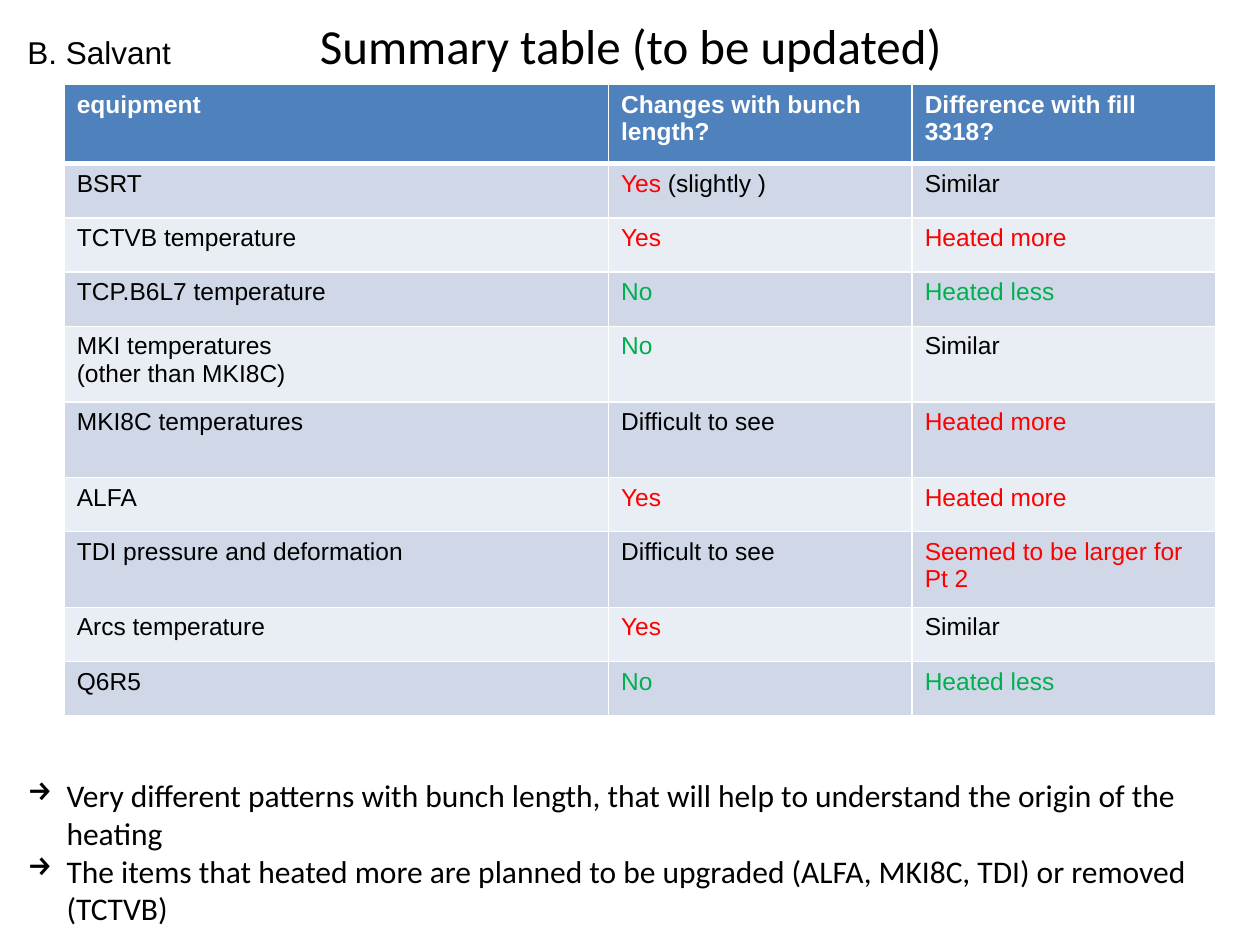
from dataclasses import dataclass

from lxml import etree
from pptx import Presentation
from pptx import util as u
from pptx.dml.color import RGBColor
from pptx.enum import text
from pptx.oxml import ns


@dataclass(frozen=True)
class Theme:
    heading: str = "Calibri"
    body: str = "Arial"
    ink: str = "000000"
    white: str = "FFFFFF"
    more: str = "FF0000"
    less: str = "00B050"
    header: str = "4F81BD"
    bands: tuple = ("D0D8E8", "E9EDF4")
    title_size: int = 28
    note_size: int = 18
    table_size: int = 14


THEME = Theme()
RED, GREEN = THEME.more, THEME.less

YES, NO = [("Yes", RED)], [("No", GREEN)]
UNCLEAR, SIMILAR = [("Difficult to see", THEME.ink)], [("Similar", THEME.ink)]
MORE, LESS = [("Heated more", RED)], [("Heated less", GREEN)]

HEADINGS = ["equipment", "Changes with bunch length?", "Difference with fill 3318?"]
FINDINGS = [
    ("BSRT", YES + [(" (slightly )", THEME.ink)], SIMILAR),
    ("TCTVB temperature", YES, MORE),
    ("TCP.B6L7 temperature", NO, LESS),
    ("MKI temperatures \n(other than MKI8C)", NO, SIMILAR),
    ("MKI8C temperatures", UNCLEAR, MORE),
    ("ALFA", YES, MORE),
    ("TDI pressure and deformation", UNCLEAR, [("Seemed to be larger for Pt 2", RED)]),
    ("Arcs temperature", YES, SIMILAR),
    ("Q6R5", NO, LESS),
]
COLUMN_WIDTHS = [4.32, 2.41, 2.41]
HEADER_HEIGHT, ROW_HEIGHT, TALL_HEIGHT = 0.63, 0.43, 0.6
TALL_ROWS = {4, 5, 7}
CONCLUSIONS = [
    "Very different patterns with bunch length, that will help to understand "
    "the origin of the heating",
    "The items that heated more are planned to be upgraded (ALFA, MKI8C, TDI) "
    "or removed (TCTVB)",
]


class SlideBuilder:
    def __init__(self, slide, theme):
        self.slide = slide
        self.theme = theme

    def add_run(self, para, words, font, size, color, bold=False):
        for index, line in enumerate(words.split("\n")):
            if index:
                para.add_line_break()
            span = para.add_run()
            span.text = line
            span.font.name = font
            span.font.size = u.Pt(size)
            span.font.bold = bold
            span.font.color.rgb = RGBColor.from_string(color)

    def add_text(self, area, lines, font, size, align=text.PP_ALIGN.LEFT,
                 anchor=text.MSO_ANCHOR.TOP, bullet=None):
        box = self.slide.shapes.add_textbox(*map(u.Inches, area))
        frame = box.text_frame
        frame.word_wrap = True
        frame.vertical_anchor = anchor
        for index, line in enumerate(lines):
            para = frame.add_paragraph() if index else frame.paragraphs[0]
            para.alignment = align
            if bullet:
                self.add_bullet(para, bullet)
            self.add_run(para, line, font, size, self.theme.ink)

    def add_bullet(self, para, mark):
        indent = u.Inches(0.31)
        properties = para._p.get_or_add_pPr()
        properties.set("marL", str(indent))
        properties.set("indent", str(-indent))
        etree.SubElement(properties, ns.qn("a:buChar"), char=mark)

    def add_borders(self, cell, row):
        weights = {"L": 1, "R": 1, "T": 3 if row == 1 else 1, "B": 3 if row == 0 else 1}
        properties = cell._tc.get_or_add_tcPr()
        for side, weight in weights.items():
            line = etree.SubElement(properties, ns.qn(f"a:ln{side}"), w=str(u.Pt(weight)))
            fill = etree.SubElement(line, ns.qn("a:solidFill"))
            etree.SubElement(fill, ns.qn("a:srgbClr"), val=self.theme.white)

    def fill_cell(self, cell, row, spans):
        theme = self.theme
        self.add_borders(cell, row)
        cell.fill.solid()
        color = theme.bands[(row - 1) % 2] if row else theme.header
        cell.fill.fore_color.rgb = RGBColor.from_string(color)
        for words, ink in spans:
            self.add_run(cell.text_frame.paragraphs[0], words, theme.body,
                         theme.table_size, ink, bold=row == 0)

    def add_table(self, left, top, widths, heights, rows):
        area = (left, top, sum(widths), sum(heights))
        table = self.slide.shapes.add_table(
            len(rows), len(widths), *map(u.Inches, area)).table
        for column, width in zip(table.columns, widths):
            column.width = u.Inches(width)
        for index, (height, cells) in enumerate(zip(heights, rows)):
            table.rows[index].height = u.Inches(height)
            for column, spans in enumerate(cells):
                self.fill_cell(table.cell(index, column), index, spans)


def main():
    deck = Presentation()
    deck.slide_width, deck.slide_height = u.Inches(10), u.Inches(7.5)
    page = SlideBuilder(deck.slides.add_slide(deck.slide_layouts[6]), THEME)

    page.add_text((0.2, 0.05, 9.61, 0.61), ["Summary table (to be updated)"],
                  THEME.heading, THEME.title_size,
                  text.PP_ALIGN.CENTER, text.MSO_ANCHOR.MIDDLE)

    rows = [[[(heading, THEME.white)] for heading in HEADINGS]]
    rows += [[[(name, THEME.ink)], change, difference]
             for name, change, difference in FINDINGS]
    heights = [HEADER_HEIGHT] + [
        TALL_HEIGHT if row in TALL_ROWS else ROW_HEIGHT
        for row in range(1, len(rows))]
    page.add_table(0.51, 0.67, COLUMN_WIDTHS, heights, rows)

    page.add_text((0.12, 6.11, 9.88, 1.31), CONCLUSIONS,
                  THEME.heading, THEME.note_size, bullet="→")
    page.add_text((0.12, 0.21, 1.73, 0.4), ["B. Salvant"], THEME.body, THEME.note_size)
    deck.save("out.pptx")


if __name__ == "__main__":
    main()
